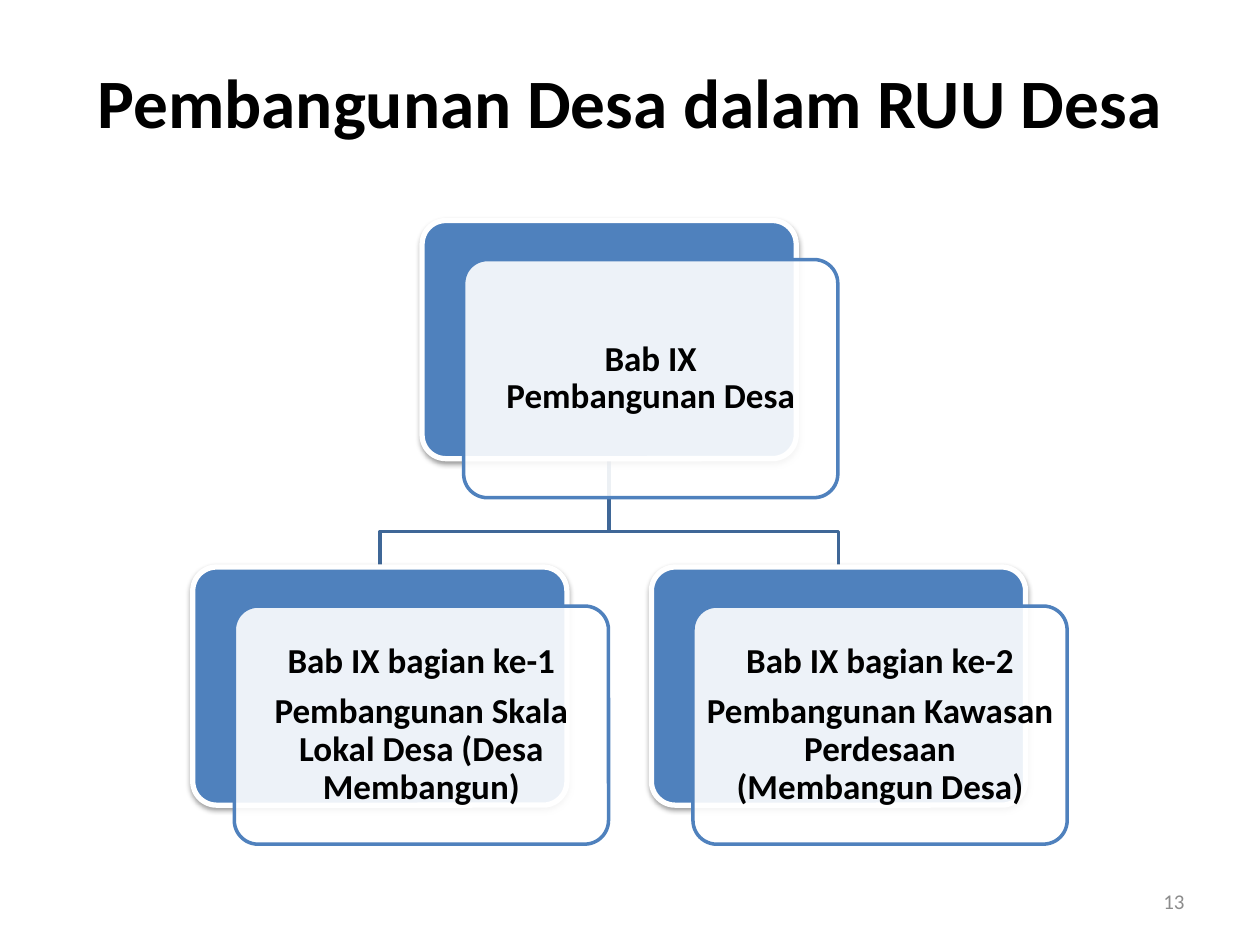
"""Build a slide with a two-level chart of village development chapters."""
from lxml import etree
from pptx import Presentation
from pptx.dml.color import RGBColor
from pptx.enum import shapes, text
from pptx.oxml import parse_xml
from pptx.oxml.ns import nsdecls, qn
from pptx.util import Inches, Pt

BLUE = RGBColor(0x4F, 0x81, 0xBD)
DARK_BLUE = RGBColor(0x3F, 0x67, 0x97)
WHITE = RGBColor(0xFF, 0xFF, 0xFF)
BLACK = RGBColor(0x00, 0x00, 0x00)
GRAY = RGBColor(0x8C, 0x8C, 0x8C)

CARD_W, CARD_H = 2.97, 1.89
OFFSET_X, OFFSET_Y = 0.33, 0.31
ROOT = (3.35, 1.75)
BRANCH_Y = 4.22
CHILDREN = [
    (5.17, 4.5, ["Bab IX bagian ke-2", "Pembangunan Kawasan Perdesaan (Membangun Desa)"]),
    (1.53, 4.5, ["Bab IX bagian ke-1", "Pembangunan Skala Lokal Desa (Desa Membangun)"]),
]
SHADOW = (
    f'<a:effectLst {nsdecls("a")}><a:outerShdw blurRad="39370" dist="20320" dir="5400000" '
    'rotWithShape="0"><a:srgbClr val="000000"><a:alpha val="38000"/></a:srgbClr>'
    '</a:outerShdw></a:effectLst>'
)


def write(tf, lines, size, color, align, bold=False):
    tf.word_wrap = True
    tf.vertical_anchor = text.MSO_ANCHOR.MIDDLE
    tf.text = "\n".join(lines)
    for p in tf.paragraphs:
        p.alignment = align
        for r in p.runs:
            r.font.name = "Calibri"
            r.font.size = Pt(size)
            r.font.bold = bold
            r.font.color.rgb = color


def add_label(s, box, line, size, color, align, bold=False):
    sp = s.shapes.add_textbox(*map(Inches, box))
    write(sp.text_frame, [line], size, color, align, bold)


def add_branch(s, x1, y1, x2, y2):
    points = [(x1, BRANCH_Y), (x2, BRANCH_Y), (x2, y2)]
    fb = s.shapes.build_freeform(Inches(x1), Inches(y1))
    fb.add_line_segments([(Inches(x), Inches(y)) for x, y in points], close=False)
    sp = fb.convert_to_shape()
    sp.shadow.inherit = False
    sp.fill.background()
    sp.line.color.rgb = DARK_BLUE
    sp.line.width = Pt(2)


def add_panel(s, x, y, fill, line, width):
    sp = s.shapes.add_shape(shapes.MSO_SHAPE.ROUNDED_RECTANGLE,
                            Inches(x), Inches(y), Inches(CARD_W), Inches(CARD_H))
    sp.adjustments[0] = 0.1
    sp.shadow.inherit = False
    sp.fill.solid()
    sp.fill.fore_color.rgb = fill
    sp.line.color.rgb = line
    sp.line.width = Pt(width)
    return sp


def add_card(s, x, y, lines, space_after=7):
    back = add_panel(s, x, y, BLUE, WHITE, 3)
    sp_pr = back.element.spPr
    sp_pr.replace(sp_pr.find(qn("a:effectLst")), parse_xml(SHADOW))

    front = add_panel(s, x + OFFSET_X, y + OFFSET_Y, WHITE, BLUE, 2)
    color = front.element.spPr.find(qn("a:solidFill"))[0]
    etree.SubElement(color, qn("a:alpha"), val="90000")
    tf = front.text_frame
    tf.margin_left = tf.margin_right = tf.margin_top = tf.margin_bottom = Inches(0.03)
    write(tf, lines, 20, BLACK, text.PP_ALIGN.CENTER, bold=True)
    for p in tf.paragraphs:
        p.line_spacing = 0.9
        p.space_after = Pt(space_after)


def main():
    prs = Presentation()
    prs.slide_width, prs.slide_height = Inches(10), Inches(7.5)
    s = prs.slides.add_slide(prs.slide_layouts[6])
    add_label(s, (0.5, 0.3, 9, 1), "Pembangunan Desa dalam RUU Desa", 39.6, BLACK,
              text.PP_ALIGN.CENTER, bold=True)
    root_x, root_y = ROOT
    for x, y, _ in CHILDREN:
        add_branch(s, root_x + CARD_W / 2, root_y + CARD_H, x + CARD_W / 2, y)
    add_card(s, root_x, root_y, ["Bab IX", "Pembangunan Desa"], space_after=0)
    for x, y, lines in reversed(CHILDREN):
        add_card(s, x, y, lines)
    add_label(s, (7.17, 6.95, 2.33, 0.4), "13", 12, GRAY, text.PP_ALIGN.RIGHT)
    prs.save("out.pptx")


if __name__ == "__main__":
    main()
